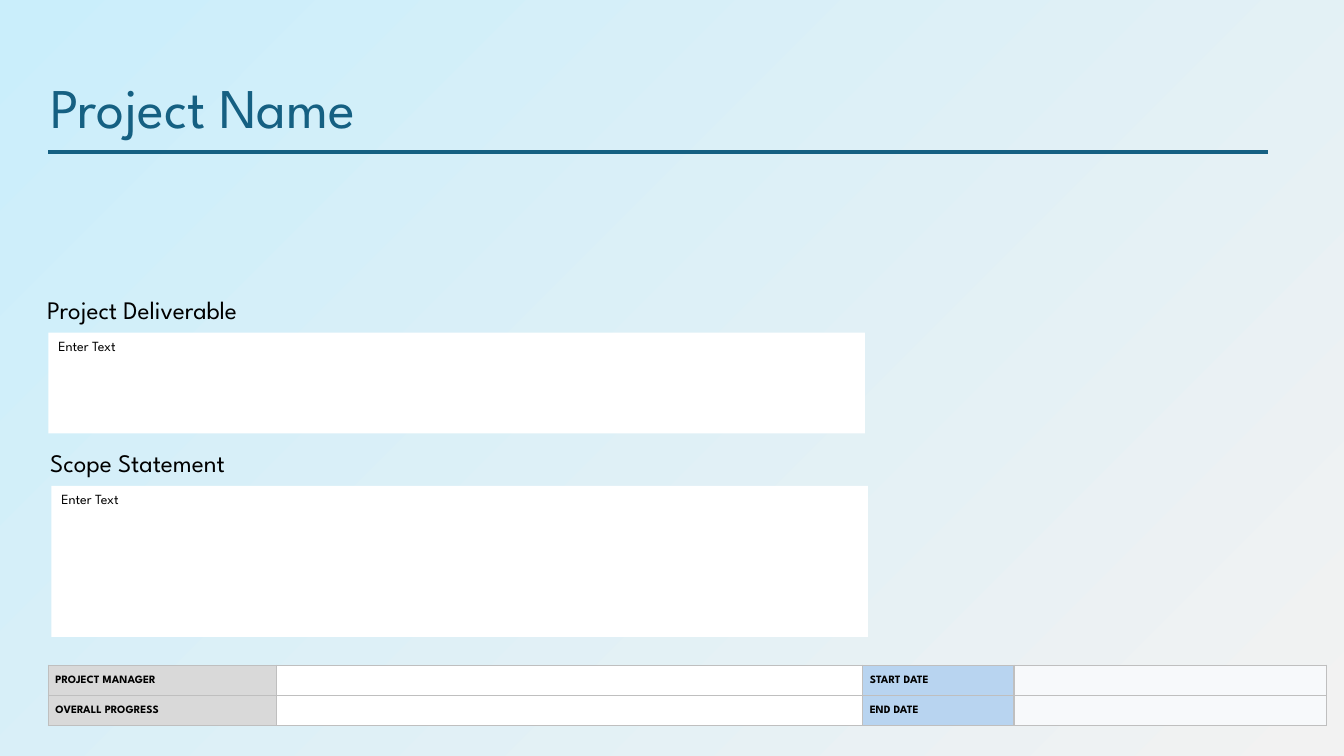
"""Build a project overview slide with deliverable, scope and status table."""
from lxml.etree import SubElement
from pptx import Presentation
from pptx.dml.color import RGBColor
from pptx.enum.shapes import MSO_CONNECTOR as Connector, MSO_SHAPE as Shape
from pptx.enum.text import MSO_ANCHOR as Anchor, PP_ALIGN as Align
from pptx.oxml.ns import qn
from pptx.util import Pt

COLORS = {
    "teal": "156082", "black": "000000", "white": "FFFFFF", "border": "BFBFBF",
    "gray": "D9D9D9", "blue": "B8D4F0", "pale": "F7F9FB",
    "mist": "F2F2F2", "sky": "CAEEFB",
}


def rgb(name):
    return RGBColor.from_string(COLORS[name])


def write(frame, text, size, color="black", bold=False):
    para = frame.paragraphs[0]
    para.alignment = Align.LEFT
    span = para.add_run()
    span.text = text
    values = {"name": "League Spartan", "size": Pt(size), "bold": bold}
    for key, value in values.items():
        setattr(span.font, key, value)
    span.font.color.rgb = rgb(color)
    return para


deck = Presentation()
deck.slide_width, deck.slide_height = Pt(960), Pt(540)
page = deck.slides.add_slide(deck.slide_layouts[6])

backdrop = page.background.fill
backdrop.gradient()
backdrop.gradient_angle = 135
for stop, color, position in zip(backdrop.gradient_stops, ("mist", "sky"), (0, 1)):
    stop.color.rgb = rgb(color)
    stop.position = position

headings = [
    ("Project Name", 28.8, 48.24, 883.44, 55.44, 40, "teal"),
    ("Project Deliverable", 26.64, 206.64, 219.6, 28.8, 18, "black"),
    ("Scope Statement", 28.8, 316.08, 219.6, 28.8, 18, "black"),
]
for text, left, top, width, height, size, color in headings:
    box = page.shapes.add_textbox(Pt(left), Pt(top), Pt(width), Pt(height))
    box.text_frame.word_wrap = True
    write(box.text_frame, text, size, color)

rule = page.shapes.add_connector(
    Connector.STRAIGHT, Pt(34.56), Pt(108.72), Pt(905.76), Pt(108.72))
rule.line.color.rgb = rgb("teal")
rule.line.width = Pt(3)
SubElement(rule._element.spPr, qn("a:effectLst"))

for left, top, height in [(34.56, 237.6, 72), (36.72, 347.04, 108)]:
    panel = page.shapes.add_shape(
        Shape.RECTANGLE, Pt(left), Pt(top), Pt(583.2), Pt(height))
    panel.shadow.inherit = False
    panel.fill.solid()
    panel.fill.fore_color.rgb = rgb("white")
    panel.line.fill.background()
    panel.text_frame.word_wrap = True
    panel.text_frame.vertical_anchor = Anchor.TOP
    write(panel.text_frame, "Enter Text", 10)

rows = [
    ("PROJECT MANAGER", "", "START DATE", ""),
    ("OVERALL PROGRESS", "", "END DATE", ""),
]
columns = [(162.72, "gray"), (419.04, "white"), (108, "blue"), (223.2, "pale")]
status = page.shapes.add_table(
    len(rows), len(columns), Pt(34.56), Pt(475.2), Pt(912.96), Pt(43.2)).table
status.first_row = status.horz_banding = False
for column, (width, color) in zip(status.columns, columns):
    column.width = Pt(width)

cell_format = {
    "vertical_anchor": Anchor.MIDDLE, "margin_left": Pt(5), "margin_right": Pt(5),
    "margin_top": 0, "margin_bottom": 0,
}
for row, labels in enumerate(rows):
    status.rows[row].height = Pt(21.6)
    for index, (label, (width, color)) in enumerate(zip(labels, columns)):
        cell = status.cell(row, index)
        for key, value in cell_format.items():
            setattr(cell, key, value)
        cell.fill.solid()
        cell.fill.fore_color.rgb = rgb(color)
        if label:
            write(cell.text_frame, label, 8, bold=True).line_spacing = 1.07
        else:
            SubElement(cell.text_frame.paragraphs[0]._p, qn("a:endParaRPr"), sz="800")
        properties = cell._tc.get_or_add_tcPr()
        for order, side in enumerate(("lnL", "lnR", "lnT", "lnB")):
            edge = SubElement(properties, qn(f"a:{side}"), w=str(Pt(1)))
            paint = SubElement(edge, qn("a:solidFill"))
            SubElement(paint, qn("a:srgbClr"), val=COLORS["border"])
            properties.insert(order, edge)

deck.save("out.pptx")
